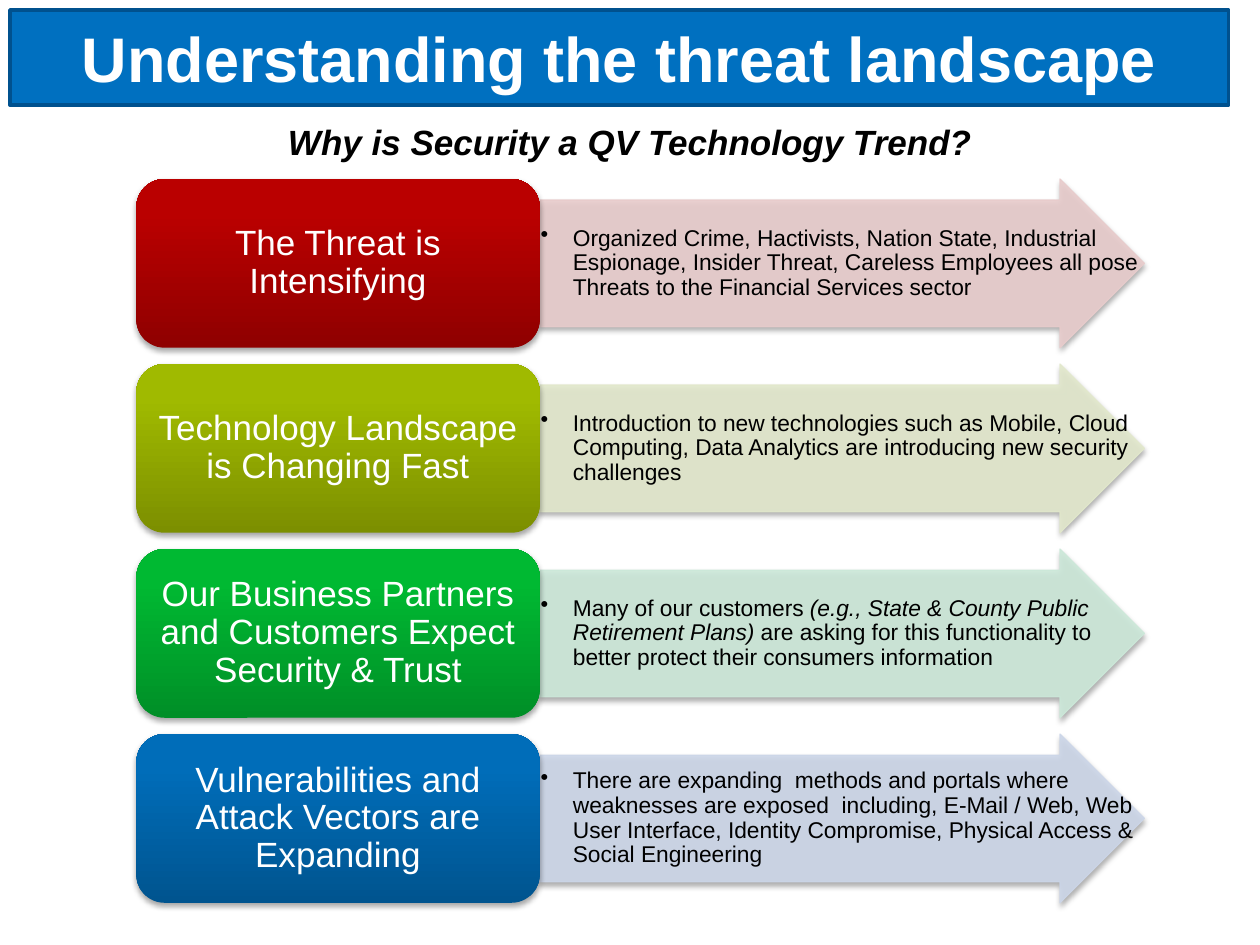
from lxml import etree
from pptx import Presentation
from pptx.dml.color import RGBColor
from pptx.enum.shapes import MSO_SHAPE
from pptx.enum.text import MSO_ANCHOR, PP_ALIGN
from pptx.oxml import parse_xml
from pptx.oxml.ns import qn
from pptx.util import Cm, Pt

ARROW, ROUNDED = MSO_SHAPE.RIGHT_ARROW, MSO_SHAPE.ROUNDED_RECTANGLE
MIDDLE, CENTER = MSO_ANCHOR.MIDDLE, PP_ALIGN.CENTER
NS = "http://schemas.openxmlformats.org/drawingml/2006/main"


def rgb(value):
    return RGBColor.from_string(value)


def add_shadow(sp):
    sp.shadow.inherit = False
    effects = sp._element.spPr.find(qn("a:effectLst"))
    effects.append(parse_xml(
        f'<a:outerShdw xmlns:a="{NS}" blurRad="40000" dist="23000" dir="5400000" rotWithShape="0">'
        '<a:srgbClr val="000000"><a:alpha val="35000"/></a:srgbClr></a:outerShdw>'))


prs = Presentation()
prs.slide_width, prs.slide_height = Cm(25.4), Cm(19.05)
s = prs.slides.add_slide(prs.slide_layouts[1])

# Title banner and subtitle
title, subtitle = s.shapes.title, s.placeholders[1]
title.fill.solid()
title.fill.fore_color.rgb = rgb("0070C0")
title.line.color.rgb = rgb("00518E")
title.line.width = Pt(2)
headings = [
    (title, "Understanding the threat landscape", 36, "FFFFFF", (0.2, 0.2, 24.57, 1.92)),
    (subtitle, "Why is Security a QV Technology Trend?", 20, "000000", (1.27, 1.27, 22.86, 3.18)),
]
for sp, text, size, color, box in headings:
    sp.left, sp.top, sp.width, sp.height = [Cm(v) for v in box]
    tf = sp.text_frame
    tf.text = text
    tf.vertical_anchor = MIDDLE
    p = tf.paragraphs[0]
    p.alignment = CENTER
    p.space_before = Pt(0)
    p.font.name, p.font.size, p.font.bold = "Arial", Pt(size), True
    p.font.color.rgb = rgb(color)
p.font.italic = True
pPr = p._p.get_or_add_pPr()
pPr.set("marL", "0")
pPr.set("indent", "0")
pPr.insert_element_before(etree.Element(qn("a:buNone")), "a:tabLst", "a:defRPr", "a:extLst")

# Rows: label, gradient from bottom to top, arrow colour, runs (text, italic)
rows = [
    ("The Threat is Intensifying", "8F0000", "BA0000", "E8CCCC",
     [("Organized Crime, Hactivists, Nation State, Industrial Espionage, Insider Threat, "
       "Careless Employees all pose Threats to the Financial Services sector", False)]),
    ("Technology Landscape is Changing Fast", "7C8F00", "A0BA00", "E2E8CC",
     [("Introduction to new technologies such as Mobile, Cloud Computing, "
       "Data Analytics are introducing new security challenges", False)]),
    ("Our Business Partners and Customers Expect Security & Trust", "008F27", "00B932", "CCE8D9",
     [("Many of our customers ", False),
      ("(e.g., State & County Public Retirement Plans) ", True),
      ("are asking for this functionality to better protect their consumers information", False)]),
    ("Vulnerabilities and Attack Vectors are Expanding", "00548F", "006DB9", "CCD6E8",
     [("There are expanding  methods and portals where weaknesses are exposed  including, "
       "E-Mail / Web, Web User Interface, Identity Compromise, Physical Access & "
       "Social Engineering", False)]),
]
label_left, label_width = Cm(2.75), Cm(8.13)
arrow_left, arrow_width = label_left + label_width, Cm(12.19)
first_top, row_step, row_height = Cm(3.61), Cm(3.73), Cm(3.4)

for i, (label, dark, light, tint, runs) in enumerate(rows):
    top = first_top + i * row_step

    # Arrow
    arrow = s.shapes.add_shape(ARROW, arrow_left, top, arrow_width, row_height)
    arrow.adjustments[0], arrow.adjustments[1] = 0.75, 0.5
    arrow.fill.solid()
    arrow.fill.fore_color.rgb = rgb(tint)
    arrow.line.color.rgb = rgb(tint)
    arrow.line.width = Pt(0.75)
    for clr in arrow._element.spPr.iter(qn("a:srgbClr")):
        etree.SubElement(clr, qn("a:alpha"), val="90000")
    add_shadow(arrow)

    # Bulleted explanation, as wide as the whole arrow
    tb = s.shapes.add_textbox(arrow_left, top, arrow_width, row_height)
    tf = tb.text_frame
    tf.word_wrap = True
    tf.vertical_anchor = MIDDLE
    tf.margin_left = tf.margin_right = tf.margin_top = tf.margin_bottom = Cm(0.02)
    p = tf.paragraphs[0]
    p.line_spacing = 0.9
    p.font.name, p.font.size = "Arial", Pt(13)
    p.font.color.rgb = rgb("000000")
    pPr = p._p.get_or_add_pPr()
    pPr.set("marL", str(Cm(0.65)))
    pPr.set("indent", str(-Cm(0.65)))
    bullet = etree.Element(qn("a:buChar"), char="•")
    pPr.insert_element_before(bullet, "a:tabLst", "a:defRPr", "a:extLst")
    for text, italic in runs:
        r = p.add_run()
        r.text = text
        r.font.italic = italic

    # Label
    sp = s.shapes.add_shape(ROUNDED, label_left, top, label_width, row_height)
    sp.fill.gradient()
    sp.fill.gradient_angle = 90
    for stop, color, position in zip(sp.fill.gradient_stops, (dark, light), (0, 0.8)):
        stop.color.rgb = rgb(color)
        stop.position = position
    sp.line.fill.background()
    add_shadow(sp)
    tf = sp.text_frame
    tf.word_wrap = True
    tf.vertical_anchor = MIDDLE
    tf.margin_left = tf.margin_right = tf.margin_top = tf.margin_bottom = Cm(0.04)
    tf.text = label
    p = tf.paragraphs[0]
    p.alignment = CENTER
    p.line_spacing = 0.9
    p.font.name, p.font.size = "Arial", Pt(20)
    p.font.color.rgb = rgb("FFFFFF")

prs.save("out.pptx")
